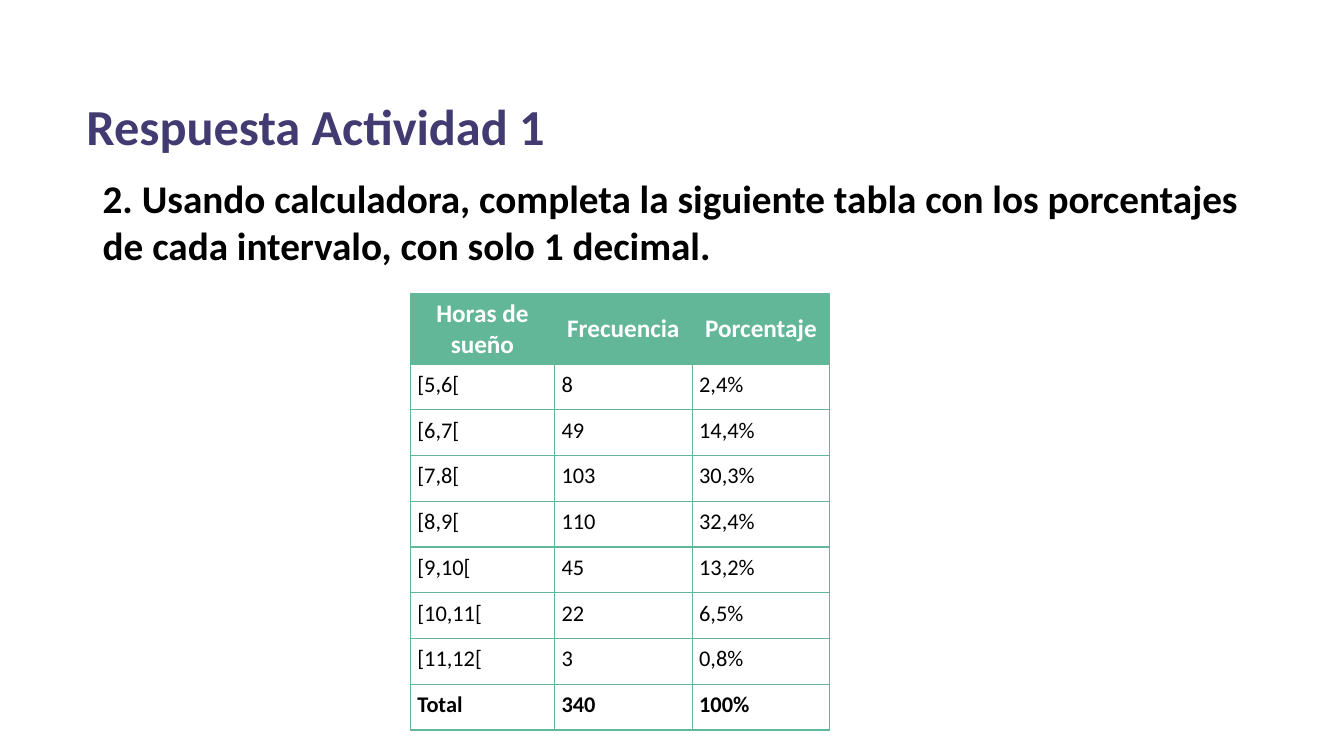
from lxml import etree
from pptx import Presentation, util as u
from pptx.dml.color import RGBColor
from pptx.enum import text
from pptx.oxml.ns import qn

WIDTH, HEIGHT = 13.33, 7.5
FONT = "Calibri"
GREEN, PURPLE, BLACK, WHITE = "63B799", "423B71", "000000", "FFFFFF"

TEXTS = [
    ("2. Usando calculadora, completa la siguiente tabla con los porcentajes "
     "de cada intervalo, con solo 1 decimal.", (0.92, 1.68, 11.82, 1.99), 28, BLACK),
    ("Respuesta Actividad 1", (0.76, 0.89, 8.93, 0.71), 36, PURPLE),
]
ROWS = [
    ("Horas de sueño", "Frecuencia", "Porcentaje"),
    ("[5,6[", "8", "2,4%"),
    ("[6,7[", "49", "14,4%"),
    ("[7,8[", "103", "30,3%"),
    ("[8,9[", "110", "32,4%"),
    ("[9,10[", "45", "13,2%"),
    ("[10,11[", "22", "6,5%"),
    ("[11,12[", "3", "0,8%"),
    ("Total", "340", "100%"),
]
TABLE_LEFT, TABLE_TOP = 4.07, 2.91
COLUMNS = (1.43, 1.365, 1.365)
HEADER_ROW, BODY_ROW = 0.68, 0.454


def color(value):
    return RGBColor.from_string(value)


def write(frame, words, size, ink, bold=True):
    para = frame.paragraphs[0]
    span = para.add_run()
    span.text = words
    span.font.name = FONT
    span.font.size = u.Pt(size)
    span.font.bold = bold
    span.font.color.rgb = color(ink)
    return para


def set_margins(target, across, down):
    target.margin_left = target.margin_right = u.Inches(across)
    target.margin_top = target.margin_bottom = u.Inches(down)


def add_borders(cell):
    properties = cell._tc.get_or_add_tcPr()
    for index, side in enumerate(("lnL", "lnR", "lnT", "lnB")):
        line = etree.Element(qn(f"a:{side}"), w=str(u.Pt(1)))
        fill = etree.SubElement(line, qn("a:solidFill"))
        etree.SubElement(fill, qn("a:srgbClr"), val=GREEN)
        properties.insert(index, line)


def add_text(page, words, place, size, ink):
    box = page.shapes.add_textbox(*map(u.Inches, place))
    box.text_frame.word_wrap = True
    set_margins(box.text_frame, 0.1, 0.05)
    write(box.text_frame, words, size, ink)


def fill_cell(cell, words, header, bold):
    if header:
        set_margins(cell, 0.1, 0.05)
        cell.vertical_anchor = text.MSO_ANCHOR.MIDDLE
        cell.fill.solid()
        cell.fill.fore_color.rgb = color(GREEN)
        para = write(cell.text_frame, words, 18, WHITE)
        para.alignment = text.PP_ALIGN.CENTER
    else:
        set_margins(cell, 0.07, 0.07)
        cell.fill.background()
        write(cell.text_frame, words, 16, BLACK, bold)
    add_borders(cell)


def add_sleep_table(page):
    heights = [HEADER_ROW] + [BODY_ROW] * (len(ROWS) - 1)
    place = (TABLE_LEFT, TABLE_TOP, sum(COLUMNS), sum(heights))
    table = page.shapes.add_table(len(ROWS), len(COLUMNS), *map(u.Inches, place)).table
    table.horz_banding = False
    for column, width in zip(table.columns, COLUMNS):
        column.width = u.Inches(width)
    for row, height, words in zip(table.rows, heights, ROWS):
        row.height = u.Inches(height)
        for cell, word in zip(row.cells, words):
            fill_cell(cell, word, words is ROWS[0], words is ROWS[-1])


def main():
    deck = Presentation()
    deck.slide_width, deck.slide_height = u.Inches(WIDTH), u.Inches(HEIGHT)
    page = deck.slides.add_slide(deck.slide_layouts[6])
    for item in TEXTS:
        add_text(page, *item)
    add_sleep_table(page)
    deck.save("out.pptx")


if __name__ == "__main__":
    main()
